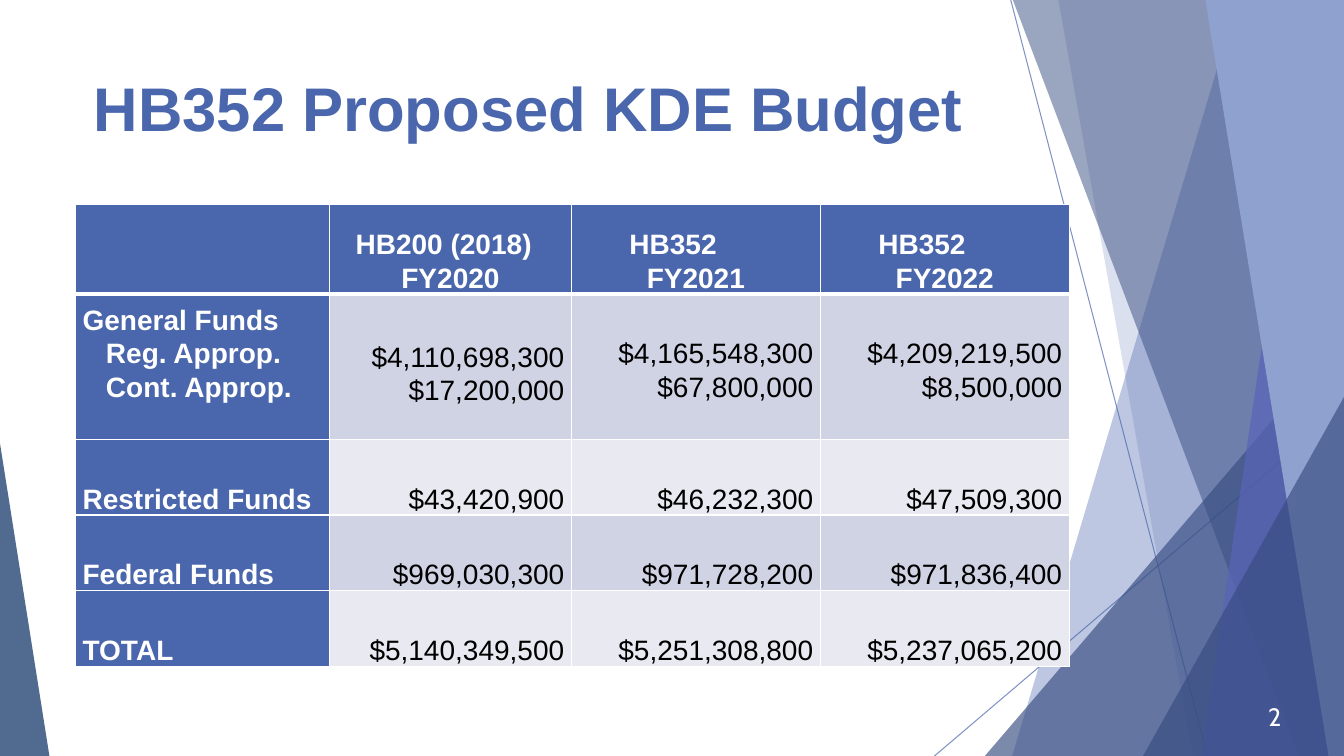
from pptx import Presentation
from pptx.dml.color import RGBColor
from pptx.enum.shapes import MSO_CONNECTOR as Link, MSO_SHAPE as Kind
from pptx.enum.text import MSO_ANCHOR as Anchor, PP_ALIGN as Align
from pptx.oxml.ns import qn
from pptx.util import Pt
from lxml.etree import SubElement as sub

BLUE, NAVY, WHITE, BLACK = "4A66AC", "374C81", "FFFFFF", "000000"
BANDS = ["D0D3E3", "E9EAF1"]
WIDE, HIGH = 960, 540

PANES = [
    ([(884, 0), (WIDE, 0), (WIDE, HIGH), (723, HIGH)], BLUE, 36),
    ([(756, 0), (WIDE, 0), (WIDE, HIGH), (852, HIGH)], BLUE, 20),
    ([(WIDE, 240.5), (WIDE, HIGH), (703.5, HIGH)], NAVY, 66),
    ([(723.5, 0), (WIDE, 0), (WIDE, HIGH), (928, HIGH)], NAVY, 50),
    ([(938, 0), (WIDE, 0), (WIDE, HIGH), (858, HIGH)], "5963B8", 70),
    ([(861, 0), (WIDE, 0), (WIDE, HIGH), (949, HIGH)], "8FA1CF", 100),
    ([(WIDE, 283.7), (WIDE, HIGH), (816.5, HIGH)], NAVY, 66),
    ([(0, 316.8), (35.3, HIGH), (0, HIGH)], "072B62", 70),
]
RAYS = [(722, 0, 862.5, HIGH), (WIDE, 291, 667.5, HIGH)]

COLS = [181.4, 172.8, 177.8, 177.8]
ROWS = [64, 103.7, 54, 54, 54]
HEADS = [("HB200 (2018)", "FY2020", 13.6), ("HB352", "FY2021", 36.4),
         ("HB352", "FY2022", 36.4)]
FUNDS = [
    (["General Funds", "Reg. Approp.", "Cont. Approp."],
     [["$4,110,698,300", "$17,200,000"], ["$4,165,548,300", "$67,800,000"],
      ["$4,209,219,500", "$8,500,000"]], [26, 23.5, 26, 26]),
    (["Restricted Funds"],
     [["$43,420,900"], ["$46,232,300"], ["$47,509,300"]], [0] * 4),
    (["Federal Funds"],
     [["$969,030,300"], ["$971,728,200"], ["$971,836,400"]], [0] * 4),
    (["TOTAL"],
     [["$5,140,349,500"], ["$5,251,308,800"], ["$5,237,065,200"]], [0] * 4),
]


def tint(text):
    return RGBColor.from_string(text)


def apply(item, **vals):
    for key, val in vals.items():
        setattr(item, key, val)


def paint(item, color):
    item.fill.solid()
    item.fill.fore_color.rgb = tint(color)


def fade(elem, pct):
    color = next(elem.iter(qn("a:srgbClr")))
    sub(color, qn("a:alpha"), val=str(pct * 1000))


def pane(slide, pts, color, pct):
    spots = [(Pt(x), Pt(y)) for x, y in pts]
    form = slide.shapes.build_freeform(*spots[0], scale=1.0)
    form.add_line_segments(spots[1:], close=True)
    shape = form.convert_to_shape()
    shape.shadow.inherit = False
    shape.line.fill.background()
    paint(shape, color)
    if pct < 100:
        fade(shape._element.spPr, pct)


def ray(slide, *ends):
    line = slide.shapes.add_connector(Link.STRAIGHT, *map(Pt, ends))
    line.line.width = Pt(0.75)
    line.line.color.rgb = tint(BLUE)
    fade(line._element.spPr, 70)
    sub(line._element.spPr, qn("a:effectLst"))


def write(para, text, color, size, align, indent=0, face="Arial", bold=False):
    para.text = text
    para.alignment = align
    if indent:
        para._p.get_or_add_pPr().set("marL", str(Pt(indent)))
    apply(para.font, name=face, size=Pt(size), bold=bold)
    para.font.color.rgb = tint(color)


def label(slide, box, text, anchor, *style, **extra):
    frame = slide.shapes.add_textbox(*map(Pt, box)).text_frame
    apply(frame, word_wrap=True, vertical_anchor=anchor)
    write(frame.paragraphs[0], text, *style, **extra)


def edge(cell, base):
    props = cell._tc.get_or_add_tcPr()
    for side, width in zip("LRTB", (1, 1, 1, base)):
        line = sub(props, qn(f"a:ln{side}"), w=str(Pt(width)))
        fill = sub(line, qn("a:solidFill"))
        sub(fill, qn("a:srgbClr"), val=WHITE)


def fill(cell, lines, back, color, bold, low=0, base=1):
    apply(cell, margin_left=Pt(5), margin_right=Pt(5), margin_top=0,
          margin_bottom=Pt(low), vertical_anchor=Anchor.BOTTOM)
    edge(cell, base)
    paint(cell, back)
    frame = cell.text_frame
    for num, (text, align, indent) in enumerate(lines):
        para = frame.add_paragraph() if num else frame.paragraphs[0]
        write(para, text, color, 20, align, indent, bold=bold)
        para.line_spacing = 1.07


def budget(slide):
    frame = slide.shapes.add_table(len(ROWS), len(COLS), Pt(54), Pt(146.2),
                                   Pt(sum(COLS)), Pt(sum(ROWS)))
    table = frame.table
    apply(table, first_row=False, horz_banding=False)
    for col, width in zip(table.columns, COLS):
        col.width = Pt(width)
    for row, height in zip(table.rows, ROWS):
        row.height = Pt(height)
    fill(table.cell(0, 0), [], BLUE, WHITE, True, base=3)
    for col, (bill, year, indent) in enumerate(HEADS, 1):
        lines = [(bill, Align.LEFT, indent), (year, Align.CENTER, 0)]
        fill(table.cell(0, col), lines, BLUE, WHITE, True, base=3)
    for row, (names, sums, lows) in enumerate(FUNDS, 1):
        lines = [(name, Align.LEFT, 16.7 if num else 0)
                 for num, name in enumerate(names)]
        fill(table.cell(row, 0), lines, BLUE, WHITE, True, lows[0])
        for col, vals in enumerate(sums, 1):
            lines = [(val, Align.RIGHT, 0) for val in vals]
            fill(table.cell(row, col), lines, BANDS[(row - 1) % 2], BLACK,
                 False, lows[col])


def main():
    deck = Presentation()
    apply(deck, slide_width=Pt(WIDE), slide_height=Pt(HIGH))
    slide = deck.slides.add_slide(deck.slide_layouts[6])
    for ends in RAYS:
        ray(slide, *ends)
    for pts, color, pct in PANES:
        pane(slide, pts, color, pct)
    label(slide, (59.8, 46.5, 677, 58), "HB352 Proposed KDE Budget",
          Anchor.TOP, BLUE, 44, Align.LEFT, bold=True)
    label(slide, (868.3, 497.5, 54, 28.8), "2",
          Anchor.MIDDLE, WHITE, 18, Align.RIGHT, face="Cabin")
    budget(slide)
    deck.save("out.pptx")


if __name__ == "__main__":
    main()
